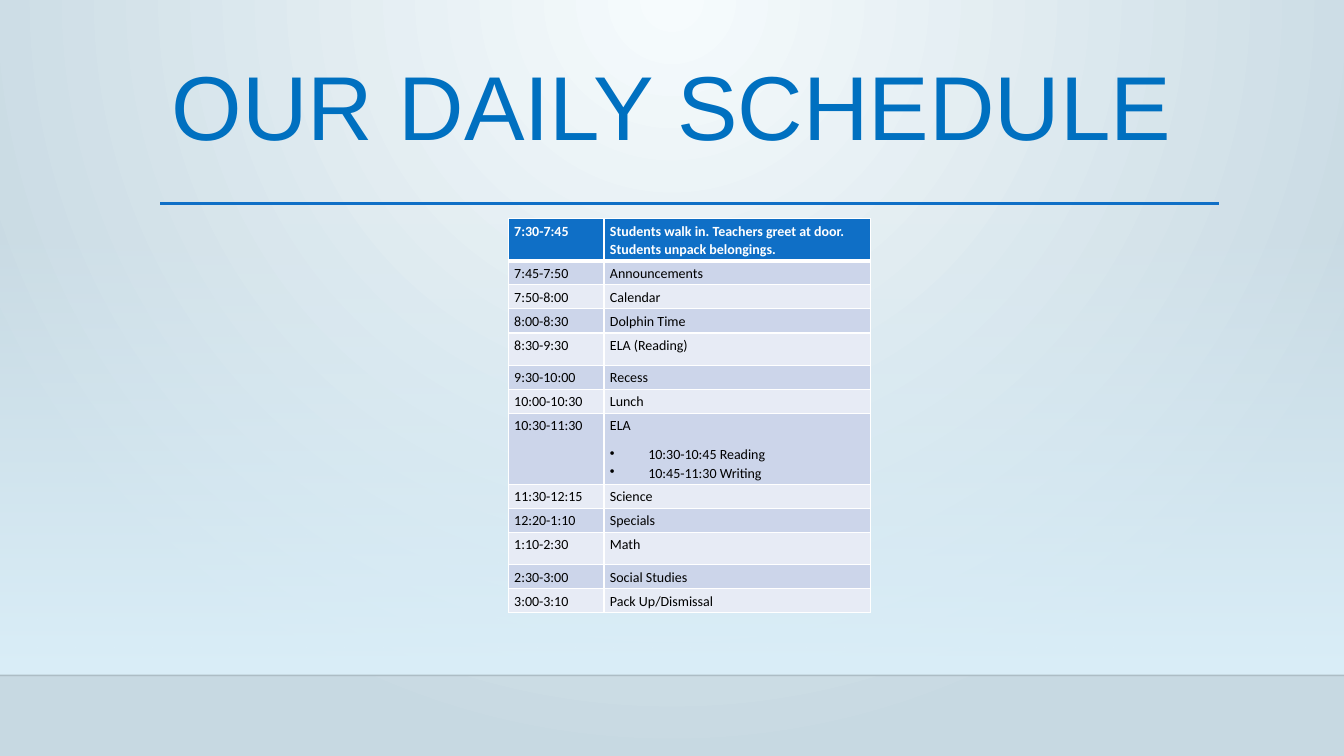
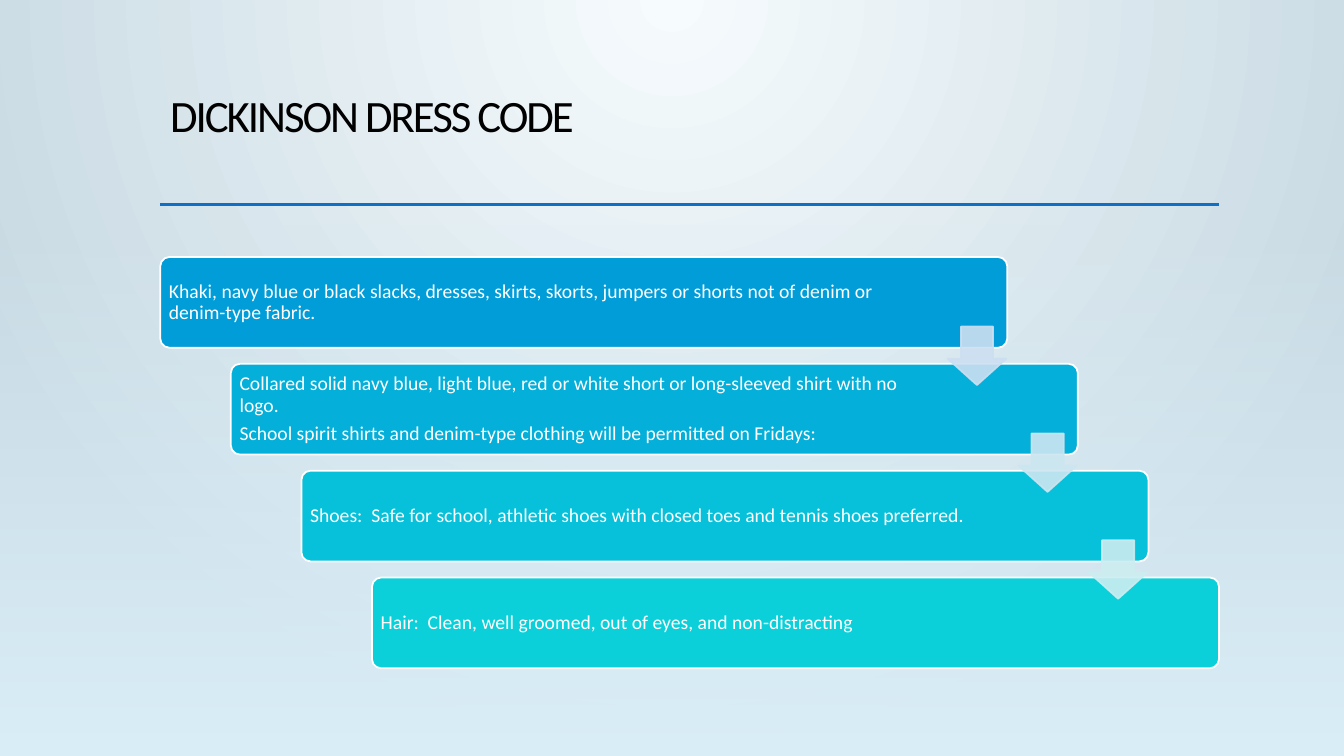
from lxml import etree
from pptx import Presentation
from pptx.dml.color import RGBColor
from pptx.enum import shapes, text
from pptx.oxml import parse_xml
from pptx.oxml.ns import nsdecls, qn
from pptx.util import Inches, Pt

WIDTH, HEIGHT = 13.33, 7.5
MARGIN, RULE_RIGHT = 1.59, 12.09
BAND_TOP, FLOOR = 2.21, 6.7

SCHEDULE = [
    ("7:30-7:45", "Students walk in. Teachers greet at door. Students unpack belongings."),
    ("7:45-7:50", "Announcements"),
    ("7:50-8:00", "Calendar"),
    ("8:00-8:30", "Dolphin Time"),
    ("8:30-9:30", "ELA (Reading)"),
    ("9:30-10:00", "Recess"),
    ("10:00-10:30", "Lunch"),
    ("10:30-11:30", "ELA", "10:30-10:45 Reading", "10:45-11:30 Writing"),
    ("11:30-12:15", "Science"),
    ("12:20-1:10", "Specials"),
    ("1:10-2:30", "Math"),
    ("2:30-3:00", "Social Studies"),
    ("3:00-3:10", "Pack Up/Dismissal"),
]
ROW_HEIGHT = 0.23
SPECIAL_HEIGHTS = {0: 0.41, 4: 0.32, 7: 0.65, 10: 0.32}

# Fill, right text inset and paragraphs of each card
DRESS_CODE = [
    ("009DD9", 1.05, ["Khaki, navy blue or black slacks, dresses, skirts, skorts, jumpers "
                      "or shorts not of denim or denim-type fabric."]),
    ("04AFD9", 1.35, ["Collared solid navy blue, light blue, red or white short or "
                      "long-sleeved shirt with no logo.",
                      "School spirit shirts and denim-type clothing will be permitted on Fridays:"]),
    ("07C0D9", 1.35, ["Shoes:  Safe for school, athletic shoes with closed toes and "
                      "tennis shoes preferred."]),
    ("0BD0D9", 1.35, ["Hair:  Clean, well groomed, out of eyes, and non-distracting"]),
]
ARROW_COLORS = ["CCDFF1", "CCE6F1", "CCEDF1"]


def rgb(color):
    return RGBColor.from_string(color)


def set_alpha(element, percent):
    """Make every solid colour inside the element partly transparent."""
    for clr in element.iter(qn("a:srgbClr")):
        etree.SubElement(clr, qn("a:alpha")).set("val", str(percent * 1000))


def set_gradient(fill, parent, start, end, direction, start_alpha=100):
    """Give the fill held by parent a two-stop gradient."""
    fill.solid()
    grad = parse_xml(
        f'<a:gradFill {nsdecls("a")} rotWithShape="1"><a:gsLst>'
        f'<a:gs pos="0"><a:srgbClr val="{start}"><a:alpha val="{start_alpha * 1000}"/></a:srgbClr></a:gs>'
        f'<a:gs pos="100000"><a:srgbClr val="{end}"/></a:gs></a:gsLst>{direction}</a:gradFill>')
    parent.replace(parent.find(qn("a:solidFill")), grad)


class Deck:
    FONT = "Calibri"
    ACCENT, WHITE, BLACK = "0F6FC6", "FFFFFF", "000000"
    STRIPES = ("E7EBF5", "CCD5EA")

    def __init__(self):
        self.prs = Presentation()
        self.prs.slide_width, self.prs.slide_height = Inches(WIDTH), Inches(HEIGHT)
        self.s = None

    def new_slide(self, band_bottom, rule_y):
        """Start a slide with its backdrop, pale band and rule under the title."""
        self.s = self.prs.slides.add_slide(self.prs.slide_layouts[6])
        fill = self.s.background.fill
        fill.solid()
        set_gradient(fill, self.s._element.find(".//" + qn("p:bgPr")), "F6FBFD", "C7D9E2",
                     '<a:path path="circle"><a:fillToRect l="43000" t="0" r="43000" b="100000"/></a:path>')
        band = self.shape(shapes.MSO_SHAPE.RECTANGLE, 0, BAND_TOP, WIDTH, band_bottom - BAND_TOP)
        band.line.fill.background()
        set_gradient(band.fill, band._element.spPr, "DBEFF9", "DBEFF9",
                     '<a:lin ang="5400000" scaled="0"/>', start_alpha=0)
        if band_bottom < HEIGHT:
            self.line(0, WIDTH, band_bottom, "000001", 1, alpha=20)
        self.line(MARGIN, RULE_RIGHT, rule_y, self.ACCENT, 2.5)

    def line(self, x1, x2, y, color, width, alpha=None):
        """Draw a horizontal line."""
        ln = self.s.shapes.add_connector(shapes.MSO_CONNECTOR.STRAIGHT, Inches(x1), Inches(y),
                                         Inches(x2), Inches(y))
        ln.line.color.rgb, ln.line.width = rgb(color), Pt(width)
        sp_pr = ln._element.spPr
        if alpha:
            set_alpha(sp_pr, alpha)
        etree.SubElement(sp_pr, qn("a:effectLst"))

    def shape(self, kind, x, y, w, h, fill=None, line=None, adjust=()):
        sp = self.s.shapes.add_shape(kind, Inches(x), Inches(y), Inches(w), Inches(h))
        sp.shadow.inherit = False
        for i, value in enumerate(adjust):
            sp.adjustments[i] = value
        if fill:
            sp.fill.solid()
            sp.fill.fore_color.rgb = rgb(fill)
        if line:
            sp.line.color.rgb, sp.line.width = rgb(line), Pt(1.25)
        return sp

    def style(self, p, size, color, font=FONT, spacing=0.9, after=0, bold=False,
              align=text.PP_ALIGN.LEFT):
        p.alignment, p.line_spacing, p.space_after = align, spacing, Pt(after)
        f = p.font
        f.name, f.size, f.bold, f.color.rgb = font, Pt(size), bold, rgb(color)

    def title(self, words, x, y, w, h, size, color, anchor=text.MSO_ANCHOR.TOP, tracking=0, **style):
        tf = self.s.shapes.add_textbox(Inches(x), Inches(y), Inches(w), Inches(h)).text_frame
        tf.word_wrap, tf.vertical_anchor = True, anchor
        p = tf.paragraphs[0]
        p.text = words
        self.style(p, size, color, **style)
        if tracking:
            p._p.pPr.find(qn("a:defRPr")).set("spc", str(int(tracking * 100)))

    def card(self, x, y, w, h, fill, right_inset, lines):
        sp = self.shape(shapes.MSO_SHAPE.ROUNDED_RECTANGLE, x, y, w, h, fill, self.WHITE, [0.1])
        tf = sp.text_frame
        tf.word_wrap, tf.vertical_anchor = True, text.MSO_ANCHOR.MIDDLE
        tf.margin_left = tf.margin_top = tf.margin_bottom = Inches(0.06)
        tf.margin_right = Inches(right_inset)
        tf.text = "\n".join(lines)
        for p in tf.paragraphs:
            self.style(p, 14, self.WHITE, after=5)

    def arrow(self, x, y, size, color):
        sp = self.shape(shapes.MSO_SHAPE.DOWN_ARROW, x, y, size, size, color, color, [0.55, 0.45])
        set_alpha(sp._element.spPr, 90)

    def borders(self, cell, bottom):
        """Draw white borders, the bottom one with its own width."""
        tc_pr = cell._tc.get_or_add_tcPr()
        for side, width in (("L", 1), ("R", 1), ("T", 1), ("B", bottom)):
            tc_pr.append(parse_xml(
                f'<a:ln{side} {nsdecls("a")} w="{Pt(width)}"><a:solidFill>'
                f'<a:srgbClr val="{self.WHITE}"/></a:solidFill></a:ln{side}>'))

    def cell(self, cell, lines, row):
        """Fill a cell; lines after the first become bullets."""
        header = row == 0
        self.borders(cell, 3 if header else 1)
        cell.fill.solid()
        cell.fill.fore_color.rgb = rgb(self.ACCENT if header else self.STRIPES[row % 2])
        cell.margin_left = cell.margin_right = Inches(0.06)
        cell.margin_top = cell.margin_bottom = Inches(0.03)
        cell.text = "\n".join(lines)
        for i, p in enumerate(cell.text_frame.paragraphs):
            if i:
                p_pr = p._p.get_or_add_pPr()
                p_pr.set("marL", str(Inches(0.38)))
                p_pr.set("indent", str(-Inches(0.38)))
                etree.SubElement(p_pr, qn("a:buChar")).set("char", "•")
            after = 8 if i in (0, len(lines) - 1) else 0
            self.style(p, 10, self.WHITE if header else self.BLACK, spacing=1.07,
                       after=after, bold=header)

    def table(self, x, y, widths, heights, rows):
        tbl = self.s.shapes.add_table(len(rows), len(widths), Inches(x), Inches(y),
                                      Inches(sum(widths)), Inches(sum(heights))).table
        for col, w in zip(tbl.columns, widths):
            col.width = Inches(w)
        for r, (h, (time, *activity)) in enumerate(zip(heights, rows)):
            tbl.rows[r].height = Inches(h)
            self.cell(tbl.cell(r, 0), [time], r)
            self.cell(tbl.cell(r, 1), activity, r)


def schedule_slide(deck):
    deck.new_slide(FLOOR, 2.02)
    deck.title("OUR DAILY SCHEDULE", 0.98, 0.5, 11.37, 1.26, 64.8, "0070C0", font="Arial",
               anchor=text.MSO_ANCHOR.MIDDLE, spacing=0.8, align=text.PP_ALIGN.CENTER)
    heights = [SPECIAL_HEIGHTS.get(r, ROW_HEIGHT) for r in range(len(SCHEDULE))]
    deck.table(5.04, 2.17, [0.95, 2.64], heights, SCHEDULE)


def dress_code_slide(deck):
    deck.new_slide(HEIGHT, 2.03)
    deck.title("DICKINSON DRESS CODE", MARGIN, 0.88, RULE_RIGHT - MARGIN, 1.15, 32, deck.BLACK,
               tracking=-1.5, after=6)
    steps = [(MARGIN + 0.7 * i, 2.55 + 1.06 * i) for i in range(len(DRESS_CODE))]
    for (x, y), (fill, inset, lines) in zip(steps, DRESS_CODE):
        deck.card(x, y, 8.4, 0.9, fill, inset, lines)
    for (x, y), color in zip(steps, ARROW_COLORS):
        deck.arrow(x + 7.81, y + 0.69, 0.58, color)


def main():
    deck = Deck()
    schedule_slide(deck)
    dress_code_slide(deck)
    deck.prs.save("out.pptx")


if __name__ == "__main__":
    main()
